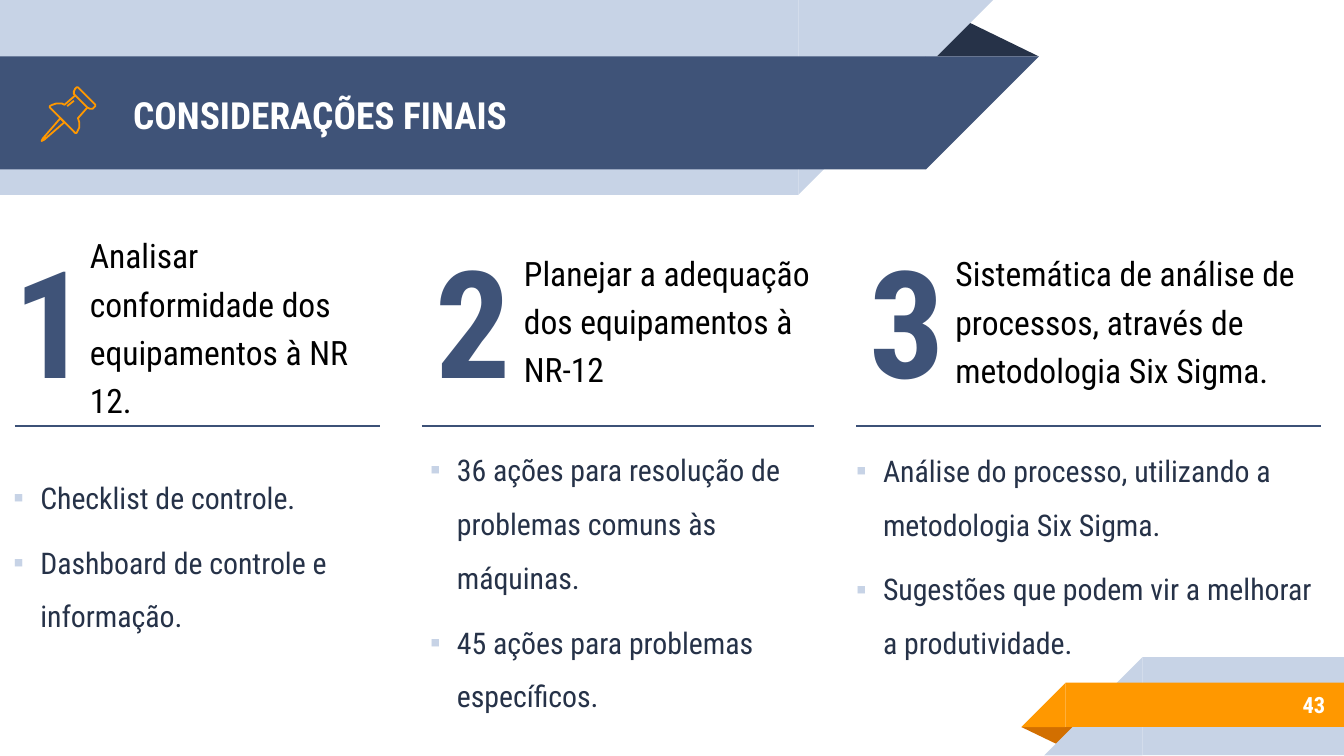
import pptx
import pptx.util
import pptx.dml.color
import pptx.enum.shapes
import pptx.enum.text
import lxml.etree

PX = 9144
FONT = "Roboto Condensed"
NAVY, INK, PALE, ORANGE, RUST, WHITE = "3F5378", "263248", "C7D3E6", "FF9800", "D26F00", "FFFFFF"
SHAPE = pptx.enum.shapes.MSO_SHAPE
ANCHOR = pptx.enum.text.MSO_ANCHOR
ALIGN = pptx.enum.text.PP_ALIGN

PIN = [
    ([(14, 23), (1, 38), (0, 40), (2, 39), (17, 26)], True),
    ([(25, 6), (34, 15), (36, 16), (38, 16), (39, 15), (40, 14), (40, 13),
      (27, 0), (26, 0), (25, 1), (24, 3), (24, 5)], True),
    ([(25, 6), (17, 13), (15, 12), (11, 12), (8, 13), (6, 14), (6, 15),
      (24, 33), (25, 34), (26, 34), (27, 32), (28, 30), (28, 26), (27, 23), (34, 15)], False),
    ([(19, 14), (24, 10)], False),
]

COLUMNS = [
    dict(x=0, number="1", heading="Analisar conformidade dos equipamentos à NR 12.",
         heading_box=(57, 181, 243, 120), rule=(11, 283), body_box=(0, 320, 300, 175),
         items=["Checklist de controle.", "Dashboard de controle e informação."]),
    dict(x=314, number="2", heading="Planejar a adequação dos equipamentos à NR-12",
         heading_box=(66, 163, 249, 146), rule=(0, 292), body_box=(-4, 320, 300, 214),
         items=["36 ações para resolução de problemas comuns às máquinas.",
                "45 ações para problemas específicos."]),
    dict(x=637, number="3", heading="Sistemática de análise de processos, através de metodologia Six Sigma.",
         heading_box=(64, 178, 298, 117), rule=(0, 346), body_box=(-10, 320, 371, 175),
         items=["Análise do processo, utilizando a metodologia Six Sigma.",
                "Sugestões que podem vir a melhorar a produtividade."]),
]


def rgb(color):
    """Turn a hex string into a colour."""
    return pptx.dml.color.RGBColor.from_string(color)


def emu(*lengths):
    """Turn px lengths into EMU."""
    return [pptx.util.Emu(n * PX) for n in lengths]


def block(s, kind, box, color, rotation=0):
    """Add a plain filled preset shape."""
    sp = s.shapes.add_shape(kind, *emu(*box))
    sp.shadow.inherit = False
    sp.fill.solid()
    sp.fill.fore_color.rgb = rgb(color)
    sp.line.fill.background()
    sp.rotation = rotation
    return sp


def write(sp, lines, size, color, bold=False, anchor=ANCHOR.MIDDLE, align=ALIGN.LEFT, spacing=1.0):
    """Fill a shape with evenly formatted paragraphs."""
    tf = sp.text_frame
    tf.word_wrap = True
    tf.auto_size = pptx.enum.text.MSO_AUTO_SIZE.NONE
    tf.vertical_anchor = anchor
    tf.margin_left, tf.margin_top, tf.margin_right, tf.margin_bottom = emu(10, 10, 10, 10)
    tf.text = "\n".join(lines)
    for i, p in enumerate(tf.paragraphs):
        p.alignment = align
        p.line_spacing = spacing
        p.space_before = pptx.util.Pt(6 if i else 0)
        for r in p.runs:
            r.font.name = FONT
            r.font.size = pptx.util.Pt(size)
            r.font.bold = bold
            r.font.color.rgb = rgb(color)


def label(s, box, text, size, color, **style):
    """Add a text box with one paragraph."""
    write(s.shapes.add_textbox(*emu(*box)), [text], size, color, **style)


def place(sp, box):
    """Move and size a placeholder."""
    sp.left, sp.top, sp.width, sp.height = emu(*box)


def bullet(p):
    """Give a paragraph a hanging square bullet."""
    pPr = p._p.get_or_add_pPr()
    pPr.set("marL", str(20 * PX))
    pPr.set("indent", str(-20 * PX))
    buClr = lxml.etree.SubElement(pPr, pptx.oxml.ns.qn("a:buClr"))
    lxml.etree.SubElement(buClr, pptx.oxml.ns.qn("a:srgbClr")).set("val", PALE)
    lxml.etree.SubElement(pPr, pptx.oxml.ns.qn("a:buChar")).set("char", "▪")


def pin(s, x, y):
    """Draw the outlined push pin."""
    for points, closed in PIN:
        fb = s.shapes.build_freeform(*points[0], scale=PX)
        fb.add_line_segments(points[1:], close=closed)
        sp = fb.convert_to_shape(*emu(x, y))
        sp.shadow.inherit = False
        sp.fill.background()
        sp.line.color.rgb = rgb(ORANGE)
        sp.line.width = pptx.util.Pt(0.96)


def header(s, x, y, text):
    """Draw the title ribbon with its pin and title."""
    fold = block(s, SHAPE.ISOSCELES_TRIANGLE, (x + 688, y + 14, 85, 28), INK)
    fold.adjustments[0] = 0.324
    for top, width, height, color in [(0, 594, 145, PALE), (42, 689, 84, NAVY)]:
        block(s, SHAPE.RECTANGLE, (x, y + top, width, height), color)
        block(s, SHAPE.RIGHT_TRIANGLE, (x + width, y + top, height, height), color, 90)
    pin(s, x + 31, y + 65)
    place(s.shapes.title, (x + 89, y + 43, 601, 84))
    write(s.shapes.title, [text], 20, WHITE, bold=True)


def footer(s, x, y, text):
    """Draw the corner ribbon with the page number."""
    fold = block(s, SHAPE.ISOSCELES_TRIANGLE, (x, y + 52, 43, 14), RUST, 180)
    fold.adjustments[0] = 0.324
    for left, top, height, color in [(90, 0, 73, PALE), (33, 19, 33, ORANGE)]:
        block(s, SHAPE.RECTANGLE, (x + left, y + top, 240 - left, height), color)
        block(s, SHAPE.RIGHT_TRIANGLE, (x + left - height, y + top, height, height), color, 270)
    label(s, (x + 73, y + 18, 163, 35), text, 12, WHITE, bold=True, align=ALIGN.RIGHT)


def column(s, body, x, number, heading, heading_box, rule, body_box, items):
    """Place a numbered heading, its rule and its bullet list."""
    left, top, width, height = heading_box
    label(s, (x + left, top, width, height), heading, 18, "000000", spacing=1.2)
    label(s, (x, 168, 76, 146), number, 80, NAVY, bold=True, anchor=ANCHOR.BOTTOM)
    start, end = rule
    line = s.shapes.add_connector(pptx.enum.shapes.MSO_CONNECTOR.STRAIGHT,
                                  *emu(x + start, 317, x + end, 317))
    line.line.color.rgb = rgb("3C5177")
    line.line.width = pptx.util.Pt(1)
    lxml.etree.SubElement(line._element.spPr, pptx.oxml.ns.qn("a:effectLst"))
    left, top, width, height = body_box
    place(body, (x + left, top, width, height))
    write(body, items, 16, INK, spacing=1.5)
    for p in body.text_frame.paragraphs:
        bullet(p)


def main():
    """Build and save the slide."""
    prs = pptx.Presentation()
    prs.slide_width, prs.slide_height = pptx.util.Pt(720), pptx.util.Pt(405)
    s = prs.slides.add_slide(prs.slide_layouts[4])
    bodies = [sp for sp in s.placeholders if sp.placeholder_format.idx > 0]
    for spare in bodies[len(COLUMNS):]:
        spare._element.getparent().remove(spare._element)
    header(s, 0, 0, "CONSIDERAÇÕES FINAIS")
    footer(s, 760, 489, "43")
    for body, content in zip(bodies, COLUMNS):
        column(s, body, **content)
    tree = s.shapes._spTree
    for sp in [s.shapes.title, *bodies[:len(COLUMNS)]]:
        tree.append(sp._element)
    prs.save("out.pptx")


if __name__ == "__main__":
    main()
